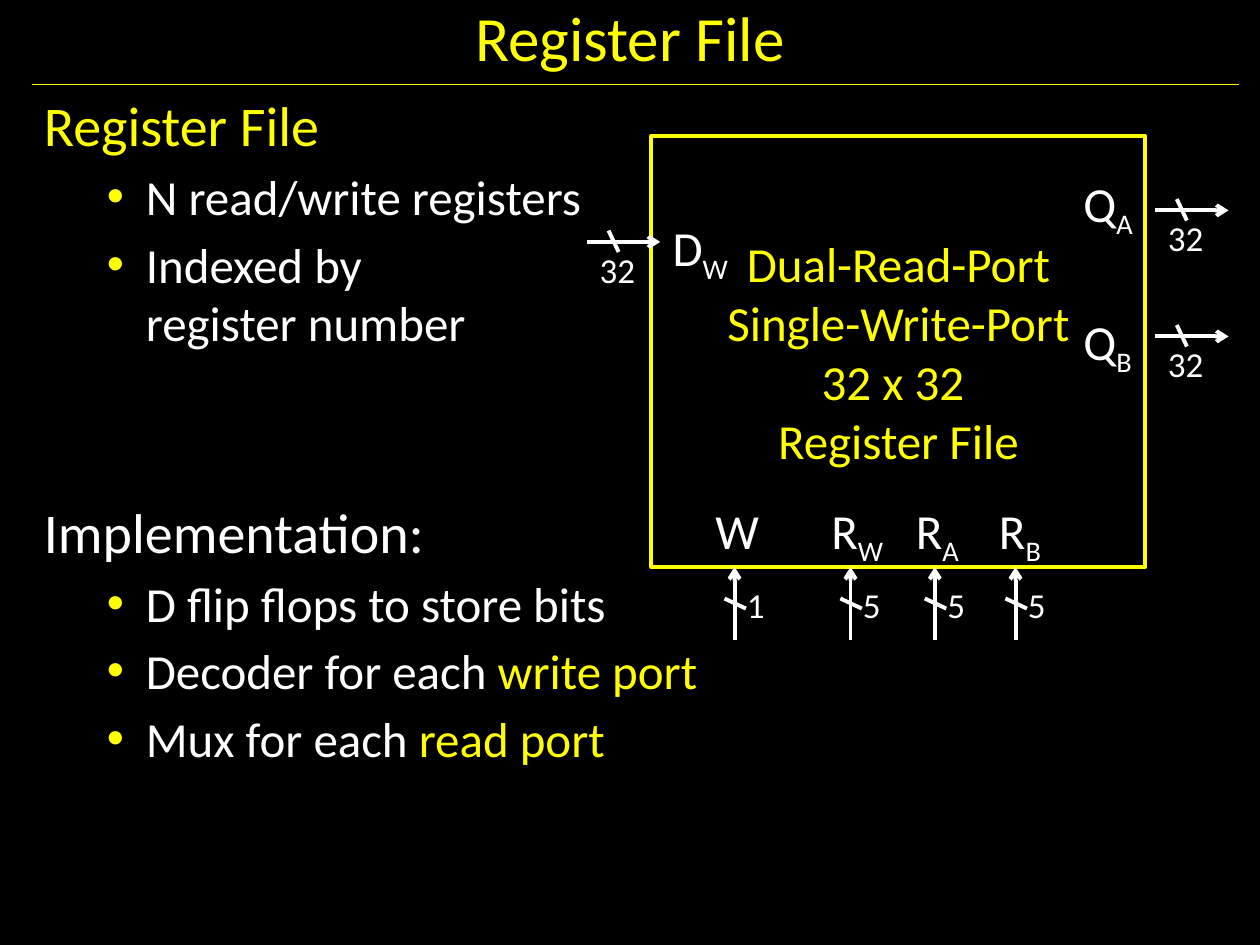
from dataclasses import dataclass

from lxml import etree
from pptx import Presentation
from pptx.dml.color import RGBColor
from pptx.enum.shapes import MSO_CONNECTOR, MSO_SHAPE
from pptx.enum.text import MSO_ANCHOR, MSO_AUTO_SIZE, PP_ALIGN
from pptx.oxml.ns import qn
from pptx.util import Inches, Pt

CENTER, LEFT = PP_ALIGN.CENTER, PP_ALIGN.LEFT
MIDDLE, TOP = MSO_ANCHOR.MIDDLE, MSO_ANCHOR.TOP
NO_FIT, GROW = MSO_AUTO_SIZE.NONE, MSO_AUTO_SIZE.SHAPE_TO_FIT_TEXT
STRAIGHT = MSO_CONNECTOR.STRAIGHT
RECTANGLE = MSO_SHAPE.RECTANGLE
TITLE_ONLY = 5


@dataclass(frozen=True)
class Theme:
    font: str = "Calibri"
    back: RGBColor = RGBColor(0x00, 0x00, 0x00)
    text: RGBColor = RGBColor(0xFF, 0xFF, 0xFF)
    accent: RGBColor = RGBColor(0xFF, 0xFF, 0x00)
    rule: RGBColor = RGBColor(0xF9, 0xF9, 0x00)
    title: int = 36
    heading: int = 32
    body: int = 28
    width: int = 20
    gap: int = 5
    section_gap: int = 83
    stroke: float = 2.25
    hairline: float = 0.75


THEME = Theme()

# Each line: is it a bullet, then its spans of text and colour
OUTLINE = [
    (False, [("Register File", THEME.accent)]),
    (True, [("N read/write registers", THEME.text)]),
    (True, [("Indexed by \vregister number", THEME.text)]),
    (False, [("Implementation:", THEME.text)]),
    (True, [("D flip flops to store bits", THEME.text)]),
    (True, [("Decoder for each ", THEME.text), ("write port", THEME.accent)]),
    (True, [("Mux for each", THEME.text), (" read port", THEME.accent)]),
]

# Ports, relative to the block: name, subscript, label box, start of the arrow
SIDE_PORTS = [
    ("Q", "A", (3.33, 0.25, 0.62), (4, 0.59)),
    ("Q", "B", (3.33, 1.34, 0.62), (4, 1.59)),
    ("D", "W", (0.07, 0.6, 0.67), (-0.51, 0.84)),
]
# Ports along the lower edge: name, subscript, label left and width, arrow x, bits
LOWER_PORTS = [
    ("W", "", 0.41, 0.55, 0.66, "1"),
    ("R", "W", 1.33, 0.65, 1.58, "5"),
    ("R", "A", 2, 0.57, 2.25, "5"),
    ("R", "B", 2.66, 0.56, 2.89, "5"),
]
ARROW_LENGTH = 0.58


def format_runs(para, size, color):
    for span in para.runs:
        span.font.name = THEME.font
        span.font.size = Pt(size)
        span.font.color.rgb = color


def add_line(page, start, end, color=THEME.text, weight=THEME.stroke, arrow=False):
    line = page.shapes.add_connector(STRAIGHT, *map(Inches, (*start, *end)))
    line.line.color.rgb = color
    line.line.width = Pt(weight)
    properties = line._element.spPr
    if arrow:
        etree.SubElement(properties.find(qn("a:ln")), qn("a:tailEnd"), type="arrow")
    etree.SubElement(properties, qn("a:effectLst"))


def add_label(page, box, text, size, subscript=""):
    label = page.shapes.add_textbox(*map(Inches, box))
    frame = label.text_frame
    frame.word_wrap = False
    frame.auto_size = GROW
    frame.text = text
    para = frame.paragraphs[0]
    if subscript:
        span = para.add_run()
        span.text = subscript
        span.font._element.set("baseline", "-25000")
    format_runs(para, size, THEME.text)


def add_title(page, box):
    left, top, width, height = box
    title = page.shapes.title
    title.left, title.top, title.width, title.height = map(Inches, box)
    frame = title.text_frame
    frame.text = "Register File"
    frame.auto_size = NO_FIT
    frame.vertical_anchor = MIDDLE
    frame.paragraphs[0].alignment = CENTER
    format_runs(frame.paragraphs[0], THEME.title, THEME.accent)
    # Rule under the title
    rule_y = top + height + 0.09
    add_line(page, (left, rule_y), (left + width + 0.08, rule_y),
             THEME.rule, THEME.hairline)


def add_bullet(para):
    properties = para._p.get_or_add_pPr()
    properties.set("marL", str(Inches(0.81)))
    properties.set("indent", str(Inches(-0.31)))
    color = etree.SubElement(properties, qn("a:buClr"))
    etree.SubElement(color, qn("a:srgbClr"), val=str(THEME.accent))
    etree.SubElement(properties, qn("a:buFont"), typeface="Arial")
    etree.SubElement(properties, qn("a:buChar"), char="•")


def add_outline(page, box):
    frame = page.shapes.add_textbox(*map(Inches, box)).text_frame
    frame.word_wrap = True
    frame.vertical_anchor = TOP
    for index, (bullet, spans) in enumerate(OUTLINE):
        para = frame.add_paragraph() if index else frame.paragraphs[0]
        para.text = spans[0][0]
        para.alignment = LEFT
        for text, _ in spans[1:]:
            para.add_run().text = text
        format_runs(para, THEME.body if bullet else THEME.heading, spans[0][1])
        para.runs[-1].font.color.rgb = spans[-1][1]
        if bullet:
            para.space_before = Pt(THEME.gap)
            add_bullet(para)
        else:
            para.space_before = Pt(THEME.section_gap if index else 0)


def add_side_bus(page, x, y):
    add_line(page, (x, y), (x + ARROW_LENGTH, y), arrow=True)
    add_line(page, (x + 0.17, y - 0.09), (x + 0.25, y + 0.08))
    add_label(page, (x, y, 0.49, 0.44), "32", THEME.width)


def add_lower_bus(page, x, y, bits):
    add_line(page, (x, y + ARROW_LENGTH), (x, y), arrow=True)
    add_line(page, (x - 0.08, y + 0.25), (x + 0.09, y + 0.33))
    add_label(page, (x, y + 0.08, 0.34, 0.44), bits, THEME.width)


def add_register_block(page, box):
    left, top, width, height = box
    block = page.shapes.add_shape(RECTANGLE, *map(Inches, box))
    block.shadow.inherit = False
    block.fill.background()
    block.line.color.rgb = THEME.accent
    block.line.width = Pt(THEME.stroke)
    frame = block.text_frame
    frame.vertical_anchor = MIDDLE
    frame.text = "Dual-Read-Port\vSingle-Write-Port\n32 x 32 \vRegister File"
    for para in frame.paragraphs:
        para.alignment = CENTER
        format_runs(para, THEME.body, THEME.accent)

    # Data ports on the sides
    for name, subscript, (x, y, label_width), (bus_x, bus_y) in SIDE_PORTS:
        add_label(page, (left + x, top + y, label_width, 0.57),
                  name, THEME.body, subscript)
        add_side_bus(page, left + bus_x, top + bus_y)

    # Control and index ports along the lower edge
    bottom = top + height
    for name, subscript, x, label_width, bus_x, bits in LOWER_PORTS:
        add_label(page, (left + x, bottom - 0.58, label_width, 0.57),
                  name, THEME.body, subscript)
        add_lower_bus(page, left + bus_x, bottom, bits)


def main():
    deck = Presentation()
    deck.slide_width, deck.slide_height = Inches(10), Inches(7.5)
    page = deck.slides.add_slide(deck.slide_layouts[TITLE_ONLY])
    page.background.fill.solid()
    page.background.fill.fore_color.rgb = THEME.back
    add_title(page, (0.25, 0, 9.5, 0.58))
    add_outline(page, (0.25, 0.67, 5.58, 6.75))
    add_register_block(page, (5.17, 1.08, 3.92, 3.42))
    deck.save("out.pptx")


if __name__ == "__main__":
    main()
